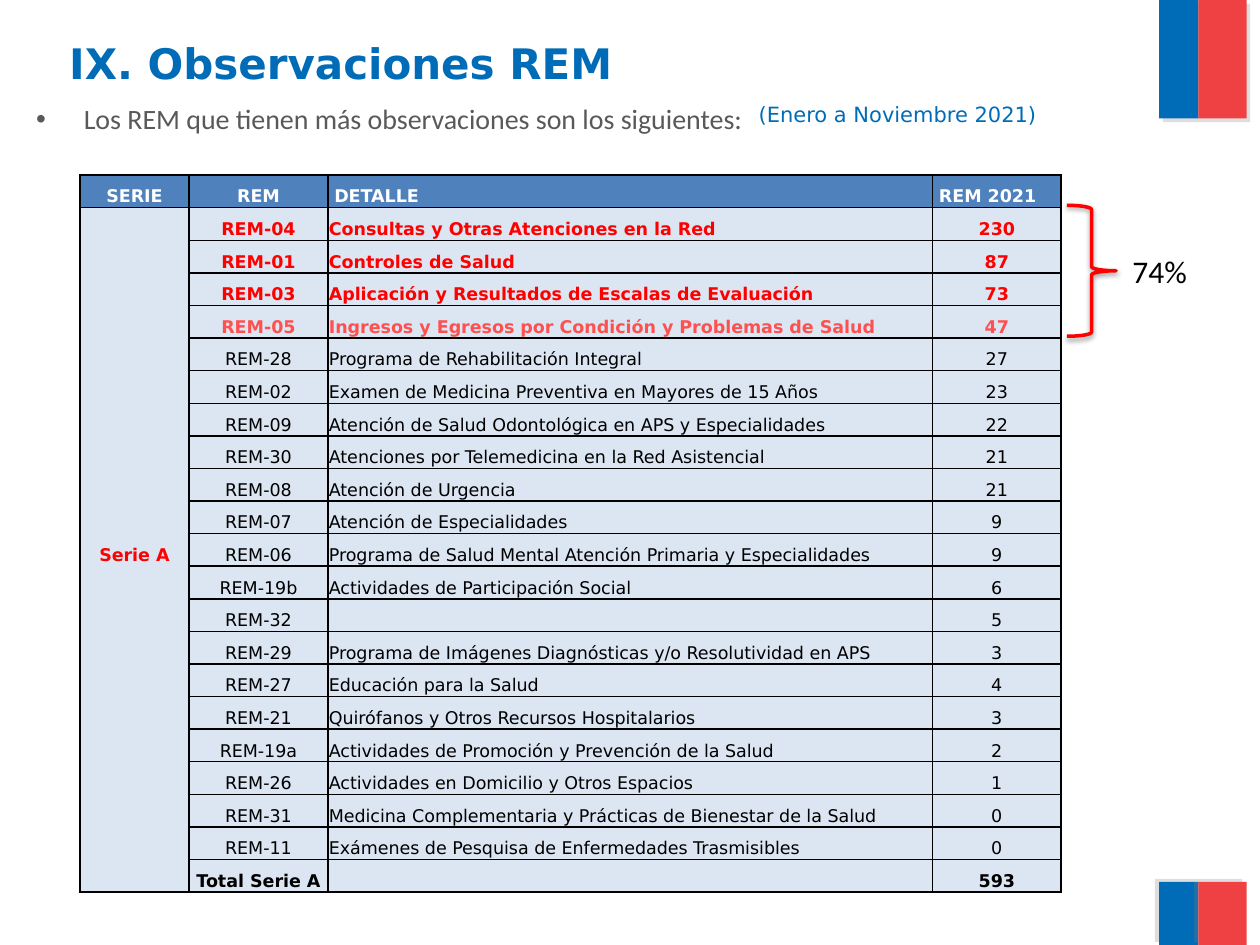
from lxml import etree
from pptx import Presentation
from pptx.dml.color import RGBColor
from pptx.enum.shapes import MSO_SHAPE
from pptx.enum.text import MSO_ANCHOR, MSO_AUTO_SIZE, PP_ALIGN
from pptx.oxml import parse_xml
from pptx.util import Cm, Pt

RECT, BRACE = MSO_SHAPE.RECTANGLE, MSO_SHAPE.RIGHT_BRACE
LEFT, CENTER = PP_ALIGN.LEFT, PP_ALIGN.CENTER
MIDDLE, FIXED = MSO_ANCHOR.MIDDLE, MSO_AUTO_SIZE.NONE
NS = "http://schemas.openxmlformats.org/drawingml/2006/main"
SANS = "DejaVu Sans"
BLUE, RED = "006CB7", "EF4144"


def style(para, size, hue, bold=False, face=SANS, align=LEFT):
    para.alignment = align
    for run in para.runs:
        font = run.font
        font.size, font.bold, font.name = Pt(size), bold, face
        font.color.rgb = RGBColor.from_string(hue)


def shade(shape, hue, alpha, blur, dist, angle):
    shape.shadow.inherit = False
    old = shape._element.spPr.find(f"{{{NS}}}effectLst")
    old.append(parse_xml(
        f'<a:outerShdw xmlns:a="{NS}" blurRad="{Pt(blur)}" dist="{Pt(dist)}" '
        f'dir="{angle * 60000}" algn="tl" rotWithShape="0"><a:srgbClr val="{hue}">'
        f'<a:alpha val="{alpha * 1000}"/></a:srgbClr></a:outerShdw>'))


prs = Presentation()
prs.slide_width, prs.slide_height = Cm(25.4), Cm(19.05)
slide = prs.slides.add_slide(prs.slide_layouts[5])
shapes = slide.shapes

# Flag bands at top and bottom right
for top, high, angle in [(0, 2.39, 45), (17.78, 1.27, 215)]:
    for left, wide, hue in [(23.37, 0.79, BLUE), (24.16, 0.97, RED)]:
        band = shapes.add_shape(RECT, Cm(left), Cm(top), Cm(wide), Cm(high))
        band.fill.solid()
        band.fill.fore_color.rgb = RGBColor.from_string(hue)
        band.line.fill.background()
        shade(band, "808080", 25, 0, 3, angle)

# Title
title = shapes.title
title.left, title.top, title.width, title.height = Cm(1.14), Cm(0.53), Cm(22.68), Cm(1.47)
frame = title.text_frame
frame.text = "IX. Observaciones REM"
frame.auto_size, frame.vertical_anchor = FIXED, MIDDLE
style(frame.paragraphs[0], 24, BLUE, True)

# Lead line, period and share
notes = [
    ("Los REM que tienen más observaciones son los siguientes:",
     0.48, 1.93, 24.08, 2.01, 16, "595959", "Calibri", LEFT),
    ("(Enero a Noviembre 2021)", 13.89, 1.93, 8.41, 0.99, 12, BLUE, SANS, CENTER),
    ("74%", 22.58, 4.95, 1.63, 1.02, 18, "000000", "Calibri", LEFT),
]
for text, left, top, wide, high, size, hue, face, align in notes:
    box = shapes.add_textbox(Cm(left), Cm(top), Cm(wide), Cm(high))
    frame = box.text_frame
    frame.text = text
    frame.word_wrap = text != "74%"
    para = frame.paragraphs[0]
    style(para, size, hue, face=face, align=align)
    if text.startswith("Los REM"):
        props = para._p.get_or_add_pPr()
        props.set("marL", str(Cm(0.96)))
        props.set("indent", str(-Cm(0.96)))
        etree.SubElement(props, f"{{{NS}}}buFont", typeface="Arial")
        etree.SubElement(props, f"{{{NS}}}buChar", char="•")

# Table of remarks per REM
rows = [
    ("REM", "DETALLE", "REM 2021"),
    ("REM-04", "Consultas y Otras Atenciones en la Red", 230),
    ("REM-01", "Controles de Salud", 87),
    ("REM-03", "Aplicación y Resultados de Escalas de Evaluación", 73),
    ("REM-05", "Ingresos y Egresos por Condición y Problemas de Salud", 47),
    ("REM-28", "Programa de Rehabilitación Integral", 27),
    ("REM-02", "Examen de Medicina Preventiva en Mayores de 15 Años", 23),
    ("REM-09", "Atención de Salud Odontológica en APS y Especialidades", 22),
    ("REM-30", "Atenciones por Telemedicina en la Red Asistencial", 21),
    ("REM-08", "Atención de Urgencia", 21),
    ("REM-07", "Atención de Especialidades", 9),
    ("REM-06", "Programa de Salud Mental Atención Primaria y Especialidades", 9),
    ("REM-19b", "Actividades de Participación Social", 6),
    ("REM-32", "", 5),
    ("REM-29", "Programa de Imágenes Diagnósticas y/o Resolutividad en APS", 3),
    ("REM-27", "Educación para la Salud", 4),
    ("REM-21", "Quirófanos y Otros Recursos Hospitalarios", 3),
    ("REM-19a", "Actividades de Promoción y Prevención de la Salud", 2),
    ("REM-26", "Actividades en Domicilio y Otros Espacios", 1),
    ("REM-31", "Medicina Complementaria y Prácticas de Bienestar de la Salud", 0),
    ("REM-11", "Exámenes de Pesquisa de Enfermedades Trasmisibles", 0),
    ("Total Serie A", "", 593),
]
first = {0: "SERIE", 1: "Serie A"}
hues = {0: "FFFFFF", 1: "FF0000", 2: "FF0000", 3: "FF0000", 4: "FF5050"}
last = len(rows) - 1
table = shapes.add_table(len(rows), 4, Cm(1.61), Cm(3.53), Cm(19.78), Cm(14.08)).table
table.first_row = table.horz_banding = False
for col, wide in zip(table.columns, [2.2, 2.8, 12.19, 2.59]):
    col.width = Cm(wide)
for r, row in enumerate(rows):
    table.rows[r].height = Cm(0.64)
    for c, text in enumerate((first.get(r, ""), *row)):
        cell = table.cell(r, c)
        cell.fill.solid()
        cell.fill.fore_color.rgb = RGBColor.from_string("DCE6F2" if r else "4F81BD")
        cell.vertical_anchor = MIDDLE
        wide = r == 0 and c > 1
        cell.margin_left = cell.margin_right = Cm(0.13 if wide else 0.02)
        cell.margin_top, cell.margin_bottom = Cm(0 if wide else 0.02), 0
        para = cell.text_frame.paragraphs[0]
        if text != "":
            para.text = str(text)
        para.line_spacing = 1.5
        style(para, 10, hues.get(r, "000000"), r in hues or r == last,
              align=LEFT if c == 2 or wide else CENTER)
        if text == "":
            etree.SubElement(para._p, f"{{{NS}}}endParaRPr", sz="1000")
        props = cell._tc.get_or_add_tcPr()
        for i, side in enumerate("LRTB"):
            props.insert(i, parse_xml(
                f'<a:ln{side} xmlns:a="{NS}" w="{Pt(1)}"><a:solidFill>'
                f'<a:srgbClr val="000000"/></a:solidFill></a:ln{side}>'))
table.cell(1, 0).merge(table.cell(last, 0))

# Brace over the four main rows
brace = shapes.add_shape(BRACE, Cm(21.51), Cm(4.14), Cm(0.99), Cm(2.64))
brace.fill.background()
brace.line.color.rgb = RGBColor.from_string("FF0000")
brace.line.width = Pt(2)
shade(brace, "000000", 38, 3.1, 1.6, 90)

prs.save("out.pptx")
